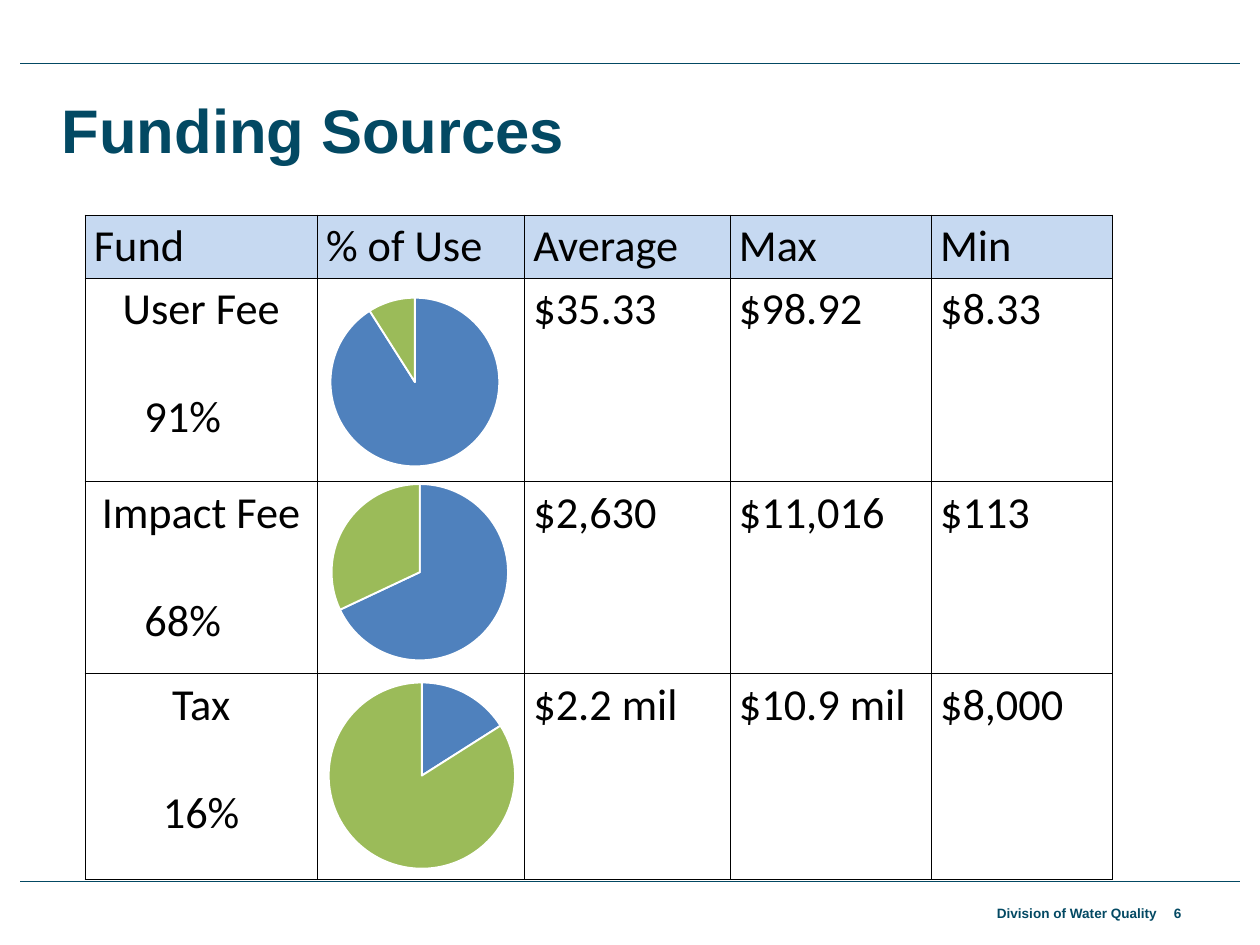
from collections import namedtuple
from itertools import accumulate

from lxml import etree
from pptx import Presentation
from pptx.chart.data import CategoryChartData
from pptx.dml.color import RGBColor
from pptx.enum.chart import XL_CHART_TYPE
from pptx.enum.shapes import MSO_CONNECTOR
from pptx.enum.text import MSO_ANCHOR, MSO_AUTO_SIZE, PP_ALIGN
from pptx.oxml.ns import qn
from pptx.util import Emu, Inches, Pt

PIE = XL_CHART_TYPE.PIE
STRAIGHT = MSO_CONNECTOR.STRAIGHT
MIDDLE = MSO_ANCHOR.MIDDLE
FIT_SHAPE = MSO_AUTO_SIZE.SHAPE_TO_FIT_TEXT
LEFT, CENTER, RIGHT = PP_ALIGN.LEFT, PP_ALIGN.CENTER, PP_ALIGN.RIGHT

COLORS = {
    "navy": "034963",
    "black": "000000",
    "white": "FFFFFF",
    "header": "C6D9F1",
    "used": "4F81BD",
    "unused": "9BBB59",
}
WIDTH, HEIGHT = Inches(14.22), Inches(10.67)
COLUMNS = [2.62, 2.34, 2.32, 2.27, 2.05]
ROWS = [0.71, 2.3, 2.17, 2.32]
HEADINGS = ["Fund", "% of Use", "Average", "Max", "Min"]

Box = namedtuple("Box", "left top width height")
Fund = namedtuple("Fund", "name percent indent amounts frame plot")

FUNDS = [
    Fund("User Fee", 91, 0.57, ["$35.33", "$98.92", "$8.33"],
         Box(-0.38, -0.08, 1.85, 1.17), Box(0.24, 0.14, 0.44, 0.73)),
    Fund("Impact Fee", 68, 0.57, ["$2,630", "$11,016", "$113"],
         Box(-0.58, -0.05, 2.15, 1.24), Box(0.3, 0.05, 0.4, 0.74)),
    Fund("Tax", 16, None, ["$2.2 mil", "$10.9 mil", "$8,000"],
         Box(-0.2, -0.02, 1.41, 1.03), Box(0.18, 0.06, 0.64, 0.88)),
]


def color(name):
    """Return the named colour."""
    return RGBColor.from_string(COLORS[name])


def share(outer, inner):
    """Return the box that takes the given shares of an outer box."""
    return Box(Emu(int(outer.left + inner.left * outer.width)),
               Emu(int(outer.top + inner.top * outer.height)),
               Emu(int(inner.width * outer.width)),
               Emu(int(inner.height * outer.height)))


def percent_box(*percents):
    """Return a box given in percent of the slide's size."""
    return share(Box(0, 0, WIDTH, HEIGHT), Box(*(value / 100 for value in percents)))


def split(length, weights):
    """Divide a length in proportion to the weights."""
    return [Emu(int(length * weight / sum(weights))) for weight in weights]


def add_run(paragraph, text, size, font_name, color_name, bold=False):
    """Add one formatted run."""
    run = paragraph.add_run()
    run.text = text
    run.font.size = Pt(size)
    run.font.name = font_name
    run.font.bold = bold
    run.font.color.rgb = color(color_name)


def add_label(slide, box, text, size, alignment=LEFT):
    """Add a bold navy label in the middle of its box."""
    frame = slide.shapes.add_textbox(*box).text_frame
    frame.word_wrap = True
    frame.vertical_anchor = MIDDLE
    frame.paragraphs[0].alignment = alignment
    add_run(frame.paragraphs[0], text, size, "Arial", "navy", True)
    return frame


def add_rule(slide, box):
    """Add a thin navy line along the top of its box."""
    line = slide.shapes.add_connector(
        STRAIGHT, box.left, box.top, box.left + box.width, box.top)
    line.line.color.rgb = color("navy")
    line.line.width = Pt(0.5)
    etree.SubElement(line._element.spPr, qn("a:effectLst"))


def add_footer(slide, owner_box, number_box):
    """Add the owner's name and the slide number."""
    frame = add_label(slide, owner_box, "Division of Water Quality", 11, RIGHT)
    frame.word_wrap = False
    frame.auto_size = FIT_SHAPE
    frame.margin_left = frame.margin_right = Inches(0.06)
    frame.margin_top = frame.margin_bottom = Inches(0.06)
    add_label(slide, number_box, "6", 11)


def style_cell(cell, fill_name=None):
    """Give a cell thin black borders and its fill."""
    properties = cell._tc.get_or_add_tcPr()
    for side in ("a:lnL", "a:lnR", "a:lnT", "a:lnB"):
        border = etree.SubElement(properties, qn(side), w=str(Pt(1)))
        fill = etree.SubElement(border, qn("a:solidFill"))
        etree.SubElement(fill, qn("a:srgbClr"), val=COLORS["black"])
    if fill_name:
        cell.fill.solid()
        cell.fill.fore_color.rgb = color(fill_name)
    else:
        cell.fill.background()


def write_cell(cell, text, alignment=LEFT):
    """Write the first line of a cell."""
    paragraph = cell.text_frame.paragraphs[0]
    paragraph.alignment = alignment
    add_run(paragraph, text, 36, "Calibri", "black")


def write_fund(cell, fund):
    """Write a fund's name with its percentage one line apart."""
    write_cell(cell, fund.name, CENTER)
    paragraph = cell.text_frame.add_paragraph()
    paragraph.alignment = CENTER
    if fund.indent:
        paragraph.alignment = LEFT
        paragraph._p.get_or_add_pPr().set("marL", str(Inches(fund.indent)))
    paragraph.space_before = Pt(44)
    add_run(paragraph, f"{fund.percent}%", 36, "Calibri", "black")


def add_fund_table(slide, box):
    """Add the table of funds and the pie of each fund."""
    table = slide.shapes.add_table(len(ROWS), len(COLUMNS), *box).table
    table.first_row = table.horz_banding = False
    widths, heights = split(box.width, COLUMNS), split(box.height, ROWS)
    for column, width in zip(table.columns, widths):
        column.width = width
    for row, height in zip(table.rows, heights):
        row.height = height
    for index, heading in enumerate(HEADINGS):
        style_cell(table.cell(0, index), "header")
        write_cell(table.cell(0, index), heading)
    tops = list(accumulate(heights, initial=box.top))
    for row, fund in enumerate(FUNDS, 1):
        for index in range(len(COLUMNS)):
            style_cell(table.cell(row, index))
        write_fund(table.cell(row, 0), fund)
        for index, amount in enumerate(fund.amounts, 2):
            write_cell(table.cell(row, index), amount)
        cell_box = Box(box.left + widths[0], tops[row], widths[1], heights[row])
        add_pie(slide, share(cell_box, fund.frame), fund)


def set_plot_layout(chart, plot):
    """Fix the inner plot area as shares of the chart."""
    area = chart._chartSpace.chart.plotArea
    for old_layout in area.findall(qn("c:layout")):
        area.remove(old_layout)
    layout = etree.Element(qn("c:layout"))
    area.insert(0, layout)
    manual = etree.SubElement(layout, qn("c:manualLayout"))
    settings = [("layoutTarget", "inner"), ("xMode", "edge"), ("yMode", "edge")]
    settings += zip("xywh", plot)
    for tag, value in settings:
        etree.SubElement(manual, qn(f"c:{tag}"), val=str(value))


def add_pie(slide, box, fund):
    """Add a transparent pie chart of a fund's use."""
    data = CategoryChartData()
    data.categories = ["1", "2", "3", "4"]
    data.add_series("Series 1", [fund.percent, 100 - fund.percent, None, None])
    chart = slide.shapes.add_chart(PIE, *box, data).chart
    chart.has_title = chart.has_legend = False
    chart.font.size = Pt(10)
    chart.font.name = "Calibri"
    chart.font.color.rgb = color("black")
    chart.plots[0].vary_by_categories = True
    for index, color_name in enumerate(("used", "unused")):
        slice_format = chart.plots[0].series[0].points[index].format
        slice_format.fill.solid()
        slice_format.fill.fore_color.rgb = color(color_name)
        slice_format.line.color.rgb = color("white")
        slice_format.line.width = Pt(1.5)
    set_plot_layout(chart, fund.plot)
    background = etree.Element(qn("c:spPr"))
    etree.SubElement(background, qn("a:noFill"))
    etree.SubElement(etree.SubElement(background, qn("a:ln")), qn("a:noFill"))
    chart._chartSpace.chart.addnext(background)


def main():
    """Build the funding slide."""
    presentation = Presentation()
    presentation.slide_width, presentation.slide_height = WIDTH, HEIGHT
    slide = presentation.slides.add_slide(presentation.slide_layouts[6])
    for top in (93.25, 6.75):
        add_rule(slide, percent_box(1.62, top, 96.83, 0))
    add_footer(slide, percent_box(78.69, 95.22, 13.57, 2.81),
               percent_box(92.48, 93.25, 5.98, 6.75))
    add_label(slide, percent_box(4.22, 8.44, 91.77, 10.31), "Funding Sources", 50)
    add_fund_table(slide, percent_box(6.75, 22.77, 81.58, 70.29))
    presentation.save("out.pptx")


if __name__ == "__main__":
    main()
